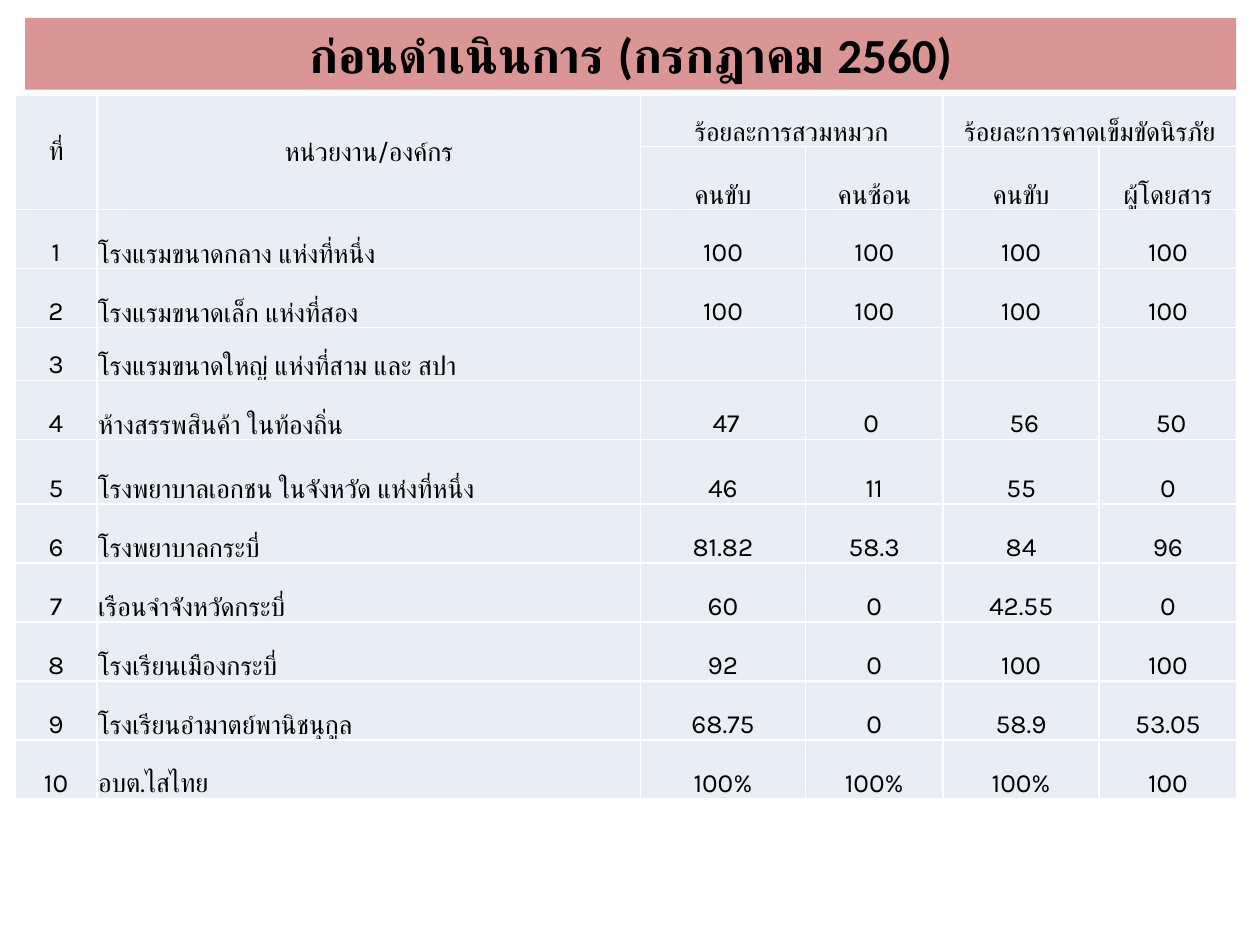
from lxml import etree
from pptx import Presentation
from pptx.dml.color import RGBColor
from pptx.enum.shapes import MSO_SHAPE
from pptx.enum.text import MSO_ANCHOR, PP_ALIGN
from pptx.oxml.ns import qn
from pptx.util import Cm, Pt

RECT = MSO_SHAPE.RECTANGLE
MIDDLE, BOTTOM = MSO_ANCHOR.MIDDLE, MSO_ANCHOR.BOTTOM
LEFT, CENTER = PP_ALIGN.LEFT, PP_ALIGN.CENTER

THEME = {
    "banner": "D99694", "cell": "E9EDF4", "border": "FFFFFF", "text": "000000",
    "title_font": "Calibri", "table_font": "Karla",
    "title_size": 28, "table_size": 15, "border_width": 1,
}

TITLE = "ก่อนดำเนินการ (กรกฎาคม 2560)"
HEADERS = [
    ["ที่", "หน่วยงาน/องค์กร", "ร้อยละการสวมหมวก", "", "ร้อยละการคาดเข็มขัดนิรภัย", ""],
    ["", "", "คนขับ", "คนซ้อน", "คนขับ", "ผู้โดยสาร"],
]
MERGES = [((0, 0), (1, 0)), ((0, 1), (1, 1)), ((0, 2), (0, 3)), ((0, 4), (0, 5))]
# Organisation, helmet (driver, pillion), seat belt (driver, passenger)
RATES = [
    ("โรงแรมขนาดกลาง แห่งที่หนึ่ง", "100", "100", "100", "100"),
    ("โรงแรมขนาดเล็ก แห่งที่สอง", "100", "100", "100", "100"),
    ("โรงแรมขนาดใหญ่ แห่งที่สาม และ สปา", "", "", "", ""),
    ("ห้างสรรพสินค้า ในท้องถิ่น", " 47", "0 ", " 56", " 50"),
    ("โรงพยาบาลเอกชน ในจังหวัด แห่งที่หนึ่ง", "46", "11", "55", "0"),
    ("โรงพยาบาลกระบี่", "81.82", "58.3", "84", "96"),
    ("เรือนจำจังหวัดกระบี่", "60", "0", "42.55", "0"),
    ("โรงเรียนเมืองกระบี่", "92", "0", "100", "100"),
    ("โรงเรียนอำมาตย์พานิชนุกูล", "68.75", "0", "58.9", "53.05"),
    ("อบต.ไสไทย", "100%", "100%", "100%", "100"),
]

COL_WIDTHS = [1.66, 10.95, 3.33, 2.77, 3.15, 2.77]
HEADER_HEIGHTS = [1.02, 1.27]
ROW_HEIGHT = 1.19
SPECIAL_HEIGHTS = {3: 1.07, 5: 1.3}  # by row number in the first column


def rgb(name):
    return RGBColor.from_string(THEME[name])


def write(tf, text, *, font, size, bold=False, align=CENTER):
    p = tf.paragraphs[0]
    p.alignment = align
    if not text:
        return
    r = p.add_run()
    r.text = text
    r.font.name, r.font.size, r.font.bold = font, Pt(size), bold
    r.font.color.rgb = rgb("text")


def add_borders(cell):
    tc_pr = cell._tc.get_or_add_tcPr()
    for side in ("lnL", "lnR", "lnT", "lnB"):
        ln = etree.SubElement(tc_pr, qn("a:" + side), w=str(Pt(THEME["border_width"])))
        fill = etree.SubElement(ln, qn("a:solidFill"))
        etree.SubElement(fill, qn("a:srgbClr"), val=THEME["border"])


def style_cell(cell, anchor):
    cell.vertical_anchor = anchor
    cell.margin_left = cell.margin_right = cell.margin_top = Cm(0.02)
    cell.margin_bottom = 0
    add_borders(cell)
    cell.fill.solid()
    cell.fill.fore_color.rgb = rgb("cell")


def add_rate_table(slide):
    rows = HEADERS + [(str(n), *rate) for n, rate in enumerate(RATES, 1)]
    heights = HEADER_HEIGHTS + [SPECIAL_HEIGHTS.get(n, ROW_HEIGHT)
                                for n in range(1, len(RATES) + 1)]
    table = slide.shapes.add_table(
        len(rows), len(COL_WIDTHS), Cm(0.3), Cm(1.93),
        Cm(sum(COL_WIDTHS)), Cm(sum(heights))).table
    table.first_row = table.horz_banding = False
    for col, width in zip(table.columns, COL_WIDTHS):
        col.width = Cm(width)
    for row, height in zip(table.rows, heights):
        row.height = Cm(height)
    for i, row in enumerate(rows):
        for j, text in enumerate(row):
            cell = table.cell(i, j)
            style_cell(cell, MIDDLE if i < len(HEADERS) and j < 2 else BOTTOM)
            is_name = j == 1 and i >= len(HEADERS)
            write(cell.text_frame, text, font=THEME["table_font"],
                  size=THEME["table_size"], align=LEFT if is_name else CENTER)
    for first, last in MERGES:
        table.cell(*first).merge(table.cell(*last))


def add_banner(slide):
    s = slide.shapes.add_shape(RECT, Cm(0.51), Cm(0.36), Cm(24.41), Cm(1.45))
    s.shadow.inherit = False
    s.fill.solid()
    s.fill.fore_color.rgb = rgb("banner")
    s.line.fill.background()
    tf = s.text_frame
    tf.word_wrap = True
    tf.vertical_anchor = MIDDLE
    write(tf, TITLE, font=THEME["title_font"], size=THEME["title_size"], bold=True)


def main():
    prs = Presentation()
    prs.slide_width, prs.slide_height = Cm(25.4), Cm(19.05)
    slide = prs.slides.add_slide(prs.slide_layouts[6])
    add_rate_table(slide)
    add_banner(slide)
    prs.save("out.pptx")


if __name__ == "__main__":
    main()
